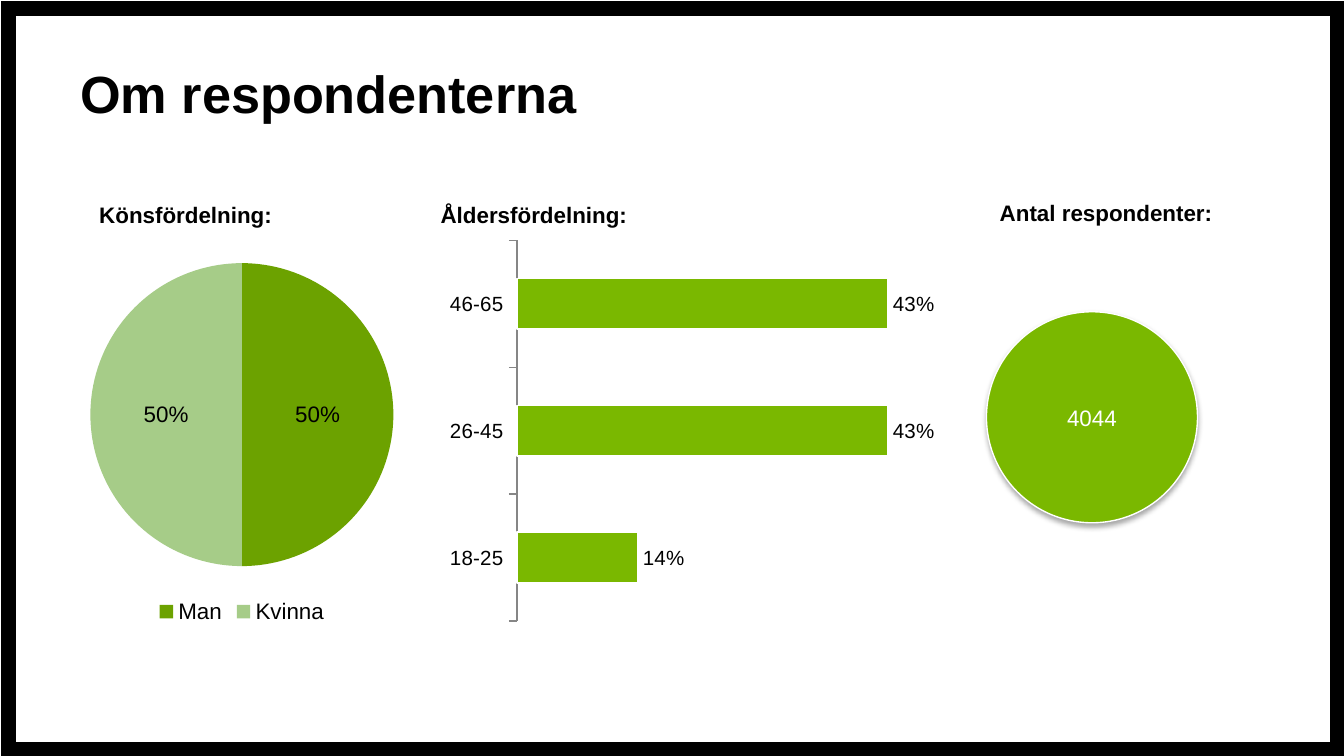
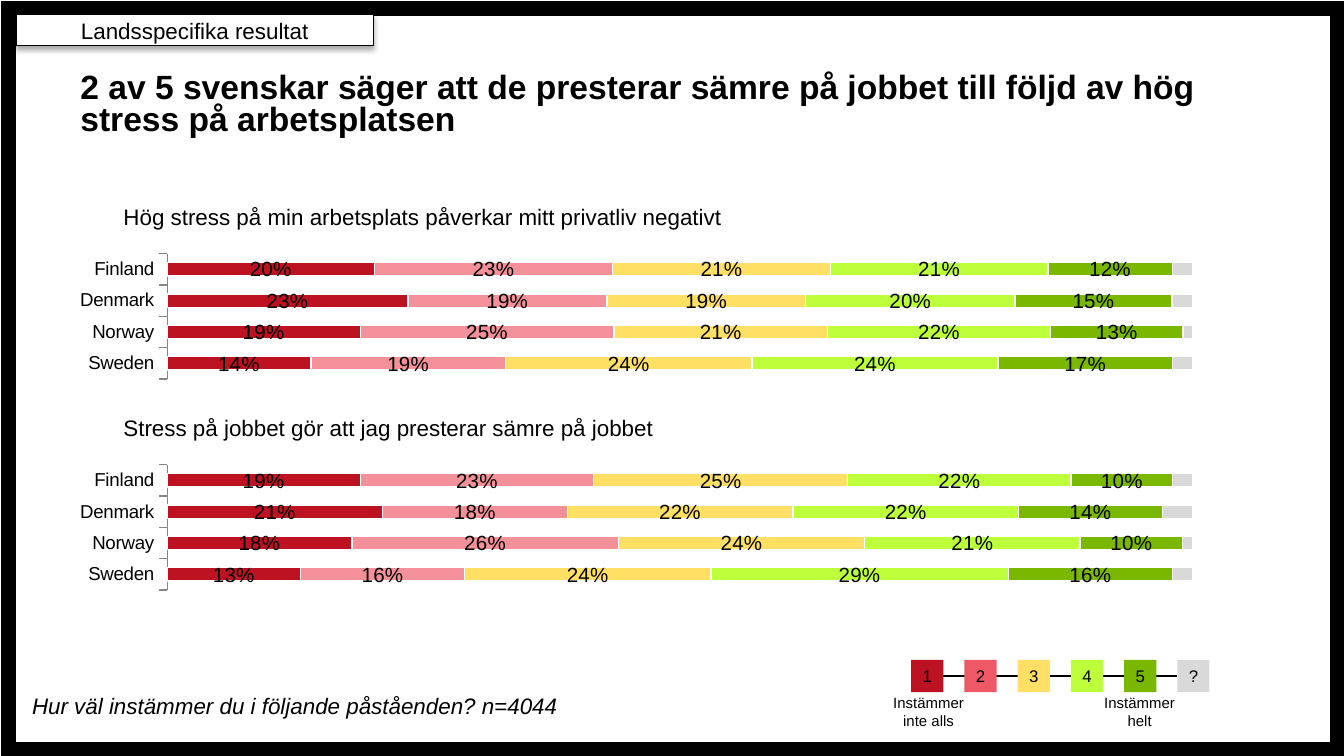
from lxml.etree import SubElement
from pptx import Presentation
from pptx.chart.data import CategoryChartData
from pptx.dml.color import RGBColor
from pptx.enum.chart import XL_CHART_TYPE, XL_LABEL_POSITION, XL_LEGEND_POSITION, XL_TICK_MARK
from pptx.enum.shapes import MSO_CONNECTOR, MSO_SHAPE
from pptx.enum.text import MSO_ANCHOR, MSO_AUTO_SIZE, PP_ALIGN
from pptx.oxml import parse_xml
from pptx.oxml.ns import nsdecls, qn
from pptx.util import Inches, Pt

FONT = "Arial"
COLORS = {
    "black": "000000", "white": "FFFFFF", "axis": "868686",
    "man": "6CA200", "kvinna": "A6CC88",
    "red": "BC1222", "rose": "EF5967", "pink": "F49099", "yellow": "FFE065",
    "lime": "BDFF3B", "green": "7AB800", "grey": "D9D9D9",
}
SHADOW = (
    f'<a:effectLst {nsdecls("a")}><a:outerShdw blurRad="{Pt(3.1)}" dist="{Pt(1.8)}" '
    'dir="5400000" rotWithShape="0"><a:srgbClr val="000000"><a:alpha val="35000"/>'
    '</a:srgbClr></a:outerShdw></a:effectLst>'
)
COUNTRIES = ["Sweden", "Norway", "Denmark", "Finland"]
ANSWER_COLORS = ["red", "pink", "yellow", "lime", "green", "grey"]
SCALE = list(zip("12345?", ["red", "rose", "yellow", "lime", "green", "grey"]))
STATEMENTS = [
    (1.46, "Hög stress på min arbetsplats påverkar mitt privatliv negativt", 4.69, [
        (0.14, 0.19, 0.23, 0.20), (0.19, 0.25, 0.19, 0.23), (0.24, 0.21, 0.19, 0.21),
        (0.24, 0.22, 0.20, 0.21), (0.17, 0.13, 0.15, 0.12), (0.02, 0.01, 0.02, 0.02)]),
    (3.03, "Stress på jobbet gör att jag presterar sämre på jobbet", 4.18, [
        (0.13, 0.18, 0.21, 0.19), (0.16, 0.26, 0.18, 0.23), (0.24, 0.24, 0.22, 0.25),
        (0.29, 0.21, 0.22, 0.22), (0.16, 0.10, 0.14, 0.10), (0.02, 0.01, 0.03, 0.02)]),
]


def rgb(name):
    """Return the named palette colour."""
    return RGBColor.from_string(COLORS[name])


def box(x, y, w, h):
    """Return a position and size in inches as lengths."""
    return [Inches(v) for v in (x, y, w, h)]


def put_text(tf, text, size=12, color="black", bold=False, italic=False,
             align=PP_ALIGN.LEFT, spacing=None):
    """Write one formatted paragraph into a text frame."""
    p = tf.paragraphs[0]
    p.alignment = align
    if spacing:
        p.line_spacing = spacing
    r = p.add_run()
    r.text = text
    r.font.name = FONT
    r.font.size = Pt(size)
    r.font.bold = bold
    r.font.italic = italic
    r.font.color.rgb = rgb(color)


class Deck:
    """Hold the shared style and the current slide."""

    def __init__(self, prs):
        """Set a 16:9 slide size."""
        self.prs = prs
        prs.slide_width = Inches(10)
        prs.slide_height = Inches(10) * 9 // 16
        self.s = None

    def add_slide(self, title, size):
        """Start a slide with its frame and title."""
        self.s = self.prs.slides.add_slide(self.prs.slide_layouts[6])
        frame = self.shape(MSO_SHAPE.RECTANGLE, (0.06, 0.06, 9.89, 5.52),
                           line="black", width=8)
        SubElement(frame.line._get_or_add_ln(), qn("a:miter")).set("lim", "800000")
        self.text((0.5, 0.5, 9, 0.66), title, grow=False, size=size, bold=True, spacing=0.8)

    def text(self, at, text, wrap=True, grow=True, **fmt):
        """Add a text box."""
        tf = self.s.shapes.add_textbox(*box(*at)).text_frame
        tf.word_wrap = wrap
        tf.auto_size = MSO_AUTO_SIZE.SHAPE_TO_FIT_TEXT if grow else MSO_AUTO_SIZE.NONE
        put_text(tf, text, **fmt)

    def shape(self, kind, at, text=None, fill=None, line=None, width=0.75,
              shadow=False, **fmt):
        """Add a preset shape with optional centred text."""
        sp = self.s.shapes.add_shape(kind, *box(*at))
        if fill:
            sp.fill.solid()
            sp.fill.fore_color.rgb = rgb(fill)
        else:
            sp.fill.background()
        if line:
            sp.line.color.rgb = rgb(line)
            sp.line.width = Pt(width)
        else:
            sp.line.fill.background()
        if shadow:
            sp._element.spPr.append(parse_xml(SHADOW))
        else:
            sp.shadow.inherit = False
        if text:
            tf = sp.text_frame
            tf.margin_left = tf.margin_right = tf.margin_top = tf.margin_bottom = 0
            tf.vertical_anchor = MSO_ANCHOR.MIDDLE
            put_text(tf, text, align=PP_ALIGN.CENTER, **fmt)
        return sp

    def line(self):
        """Add a thin connector, to be joined to shapes."""
        cx = self.s.shapes.add_connector(MSO_CONNECTOR.STRAIGHT, 0, 0, 0, 0)
        cx.line.color.rgb = rgb("black")
        cx.line.width = Pt(0.75)
        SubElement(cx._element.spPr, qn("a:effectLst"))
        return cx

    def chart(self, kind, at, cats, rows, size):
        """Add a chart with the shared font."""
        data = CategoryChartData(number_format="0%")
        data.categories = cats
        for i, row in enumerate(rows, 1):
            data.add_series(f"Series {i}", row)
        chart = self.s.shapes.add_chart(kind, *box(*at), data).chart
        chart.has_title = False
        chart.has_legend = False
        chart.font.name = FONT
        chart.font.size = Pt(size)
        chart.font.color.rgb = rgb("black")
        return chart

    def labels(self, series, size, position, fmt="###0%"):
        """Show the values of a series as percentages."""
        dl = series.data_labels
        dl.show_value = True
        dl.number_format = fmt
        dl.number_format_is_linked = False
        dl.position = position
        dl.font.name = FONT
        dl.font.size = Pt(size)
        dl.font.color.rgb = rgb("black")

    def pie(self, at, cats, values, colors):
        """Add a pie chart with a legend below."""
        chart = self.chart(XL_CHART_TYPE.PIE, at, cats, [values], 12)
        chart.has_legend = True
        chart.legend.position = XL_LEGEND_POSITION.BOTTOM
        chart.legend.include_in_layout = False
        plot = chart.plots[0]
        plot.vary_by_categories = True
        for i, color in enumerate(colors):
            fill = plot.series[0].points[i].format.fill
            fill.solid()
            fill.fore_color.rgb = rgb(color)
        self.labels(plot.series[0], 12, XL_LABEL_POSITION.CENTER)

    def bars(self, kind, at, cats, rows, colors, size, axis_size, gap, top):
        """Add a horizontal bar chart with a hidden value axis."""
        chart = self.chart(kind, at, cats, rows, size)
        plot = chart.plots[0]
        plot.gap_width = gap
        plot.vary_by_categories = False
        for series, color in zip(plot.series, colors):
            series.invert_if_negative = False
            series.format.fill.solid()
            series.format.fill.fore_color.rgb = rgb(color)
            series.format.line.color.rgb = rgb("white")
            series.format.line.width = Pt(0.75)
        val, cat = chart.value_axis, chart.category_axis
        val.visible = False
        val.has_major_gridlines = False
        val.minimum_scale, val.maximum_scale = 0, top
        cat.has_major_gridlines = False
        cat.major_tick_mark = XL_TICK_MARK.OUTSIDE
        cat.minor_tick_mark = XL_TICK_MARK.NONE
        cat.format.line.color.rgb = rgb("axis")
        cat.tick_labels.font.size = Pt(axis_size)
        return chart

    def stacked(self, at, rows):
        """Add the answers per country as full-width stacked bars."""
        chart = self.bars(XL_CHART_TYPE.BAR_STACKED_100, at, COUNTRIES, rows,
                          ANSWER_COLORS, size=18, axis_size=10, gap=133, top=1)
        plot = chart.plots[0]
        plot.overlap = 100
        for series in list(plot.series)[:-1]:
            self.labels(series, 11, XL_LABEL_POSITION.CENTER)
        area = chart._chartSpace.chart.plotArea
        for old in area.findall(qn("c:layout")):
            area.remove(old)
        layout = parse_xml(f'<c:layout {nsdecls("c")}><c:manualLayout/></c:layout>')
        for tag, value in (("layoutTarget", "inner"), ("xMode", "edge"), ("yMode", "edge"),
                           ("x", "0.097"), ("y", "0.042"), ("w", "0.898"), ("h", "0.306")):
            SubElement(layout[0], qn(f"c:{tag}")).set("val", value)
        area.insert(0, layout)


def respondents(deck):
    """Build the slide about the respondents."""
    deck.add_slide("Om respondenterna", 28)
    deck.pie((0.33, 1.82, 2.94, 2.86), ["Man", "Kvinna"], (0.5, 0.5), ["man", "kvinna"])
    chart = deck.bars(XL_CHART_TYPE.BAR_CLUSTERED, (3.27, 1.73, 3.86, 2.95),
                      ["18-25", "26-45", "46-65"], [(0.14, 0.43, 0.43)], ["green"],
                      size=11, axis_size=11, gap=150, top=0.5)
    deck.labels(chart.plots[0].series[0], 11, XL_LABEL_POSITION.OUTSIDE_END, "0%")
    for x, y, w, heading in ((0.64, 1.45, 1.97, "Könsfördelning:"),
                             (3.18, 1.45, 1.88, "Åldersfördelning:"),
                             (7.34, 1.43, 3.05, "Antal respondenter:")):
        deck.text((x, y, w, 0.3), heading, bold=True)
    deck.shape(MSO_SHAPE.OVAL, (7.34, 2.32, 1.57, 1.57), "4044", fill="green",
               line="white", shadow=True, color="white")


def stress(deck):
    """Build the slide about stress at work."""
    deck.add_slide("2 av 5 svenskar säger att de presterar sämre på jobbet "
                   "till följd av hög stress på arbetsplatsen", 18)
    for y, statement, width, rows in STATEMENTS:
        deck.stacked((0.42, y + 0.3, 8.5, 3.05), rows)
        deck.text((0.82, y, width, 0.3), statement, wrap=False)
    deck.text((0.14, 5.1, 9.76, 0.3),
              "Hur väl instämmer du i följande påståenden? n=4044", italic=True)
    deck.shape(MSO_SHAPE.RECTANGLE, (0.12, 0.11, 2.66, 0.23), "Landsspecifika resultat",
               fill="white", line="black", shadow=True)
    cx = deck.line()
    keys = [deck.shape(MSO_SHAPE.RECTANGLE, (6.78 + i * 1.98 / 5, 4.91, 0.24, 0.24),
                       label, fill=color, size=9)
            for i, (label, color) in enumerate(SCALE)]
    cx.begin_connect(keys[0], 1)
    cx.end_connect(keys[-1], 1)
    for x, caption in ((6.48, "Instämmer inte alls"), (8.05, "Instämmer helt")):
        deck.text((x, 5.11, 0.86, 0.37), caption, size=8, align=PP_ALIGN.CENTER)


def main():
    """Build and save the presentation."""
    prs = Presentation()
    deck = Deck(prs)
    respondents(deck)
    stress(deck)
    prs.save("out.pptx")


if __name__ == "__main__":
    main()
